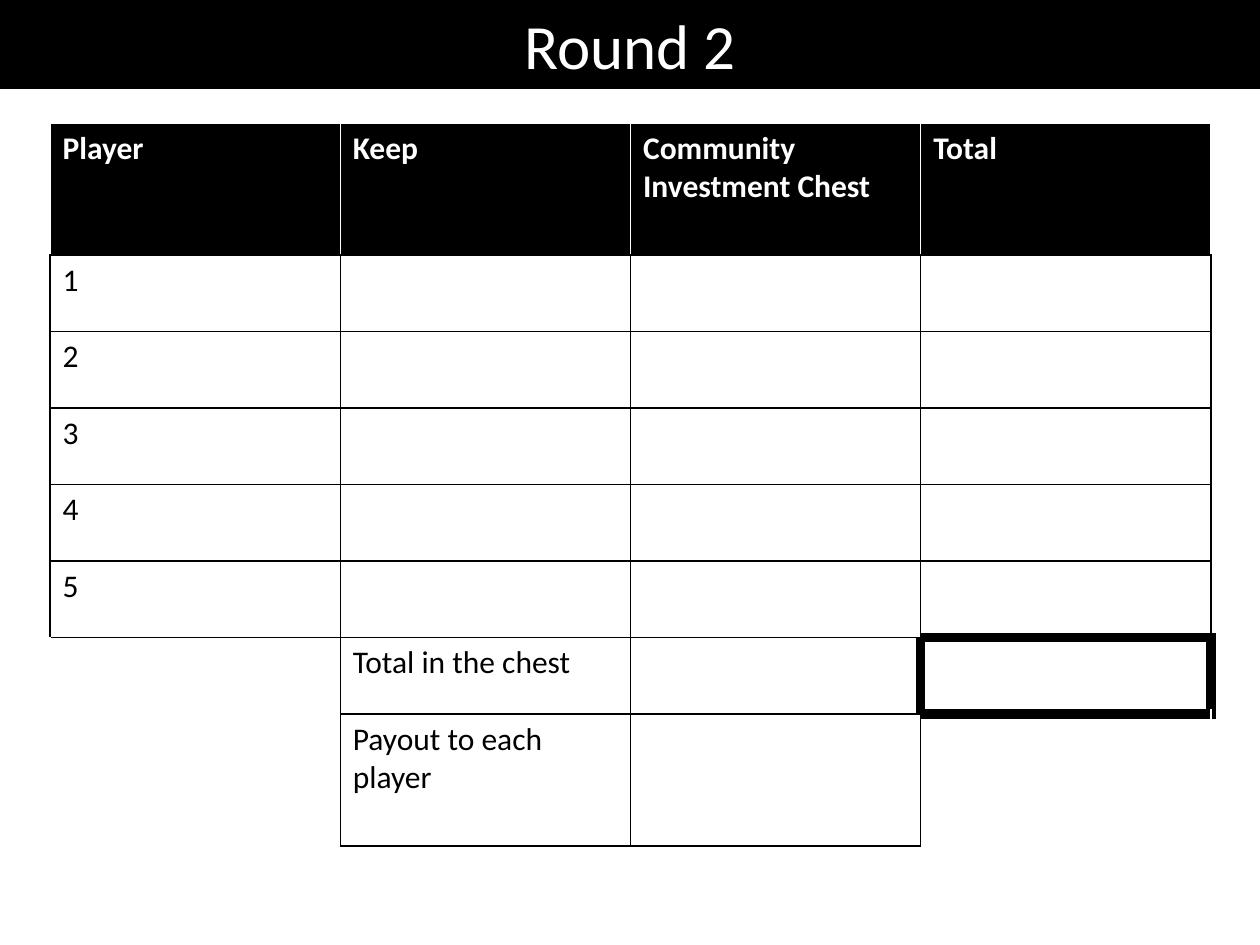
from lxml.etree import SubElement
from pptx import Presentation
from pptx.dml.color import RGBColor
from pptx.enum.shapes import MSO_SHAPE as Shape
from pptx.enum.text import MSO_ANCHOR as Anchor, PP_ALIGN as Align
from pptx.oxml.ns import qn
from pptx.util import Pt

PX = 914400 / 126
BLACK, WHITE = "000000", "FFFFFF"


def write(paragraph, text, size, color, bold=False):
    run = paragraph.add_run()
    run.text = text
    run.font.name = "Calibri"
    run.font.size = Pt(size)
    run.font.bold = bold
    run.font.color.rgb = RGBColor.from_string(color)


def add_border(cell, side, color, points):
    line = SubElement(cell._tc.get_or_add_tcPr(), qn(f"a:ln{side}"), w=str(Pt(points)))
    SubElement(SubElement(line, qn("a:solidFill")), qn("a:srgbClr"), val=color)


prs = Presentation()
prs.slide_width = round(1260 * PX)
prs.slide_height = round(945 * PX)
slide = prs.slides.add_slide(prs.slide_layouts[6])

banner = slide.shapes.add_shape(Shape.RECTANGLE, 0, 0, round(1260 * PX), round(89 * PX))
banner.shadow.inherit = False
banner.fill.solid()
banner.fill.fore_color.rgb = RGBColor.from_string(BLACK)
banner.line.fill.background()
banner.text_frame.word_wrap = True
banner.text_frame.vertical_anchor = Anchor.TOP
title = banner.text_frame.paragraphs[0]
title.alignment = Align.CENTER
write(title, "Round 2", 36, WHITE)

rows = [
    ["Player", "Keep", "Community Investment Chest", "Total"],
    *[[str(player), "", "", ""] for player in range(1, 6)],
    ["", "Total in the chest", "", ""],
    ["", "Payout to each player", "", ""],
]
# Borders that differ from a thin black line, by (row, column) and side
thin, thick = (WHITE, 1), (BLACK, 6)
special_borders = {(0, column): {"L": thin, "R": thin, "T": thin} for column in range(4)}
special_borders |= {
    (5, 3): {"B": thick},
    (6, 0): {"L": thin, "B": thin},
    (6, 2): {"R": thick},
    (6, 3): {"L": thick, "R": thick, "T": thick, "B": thick},
    (7, 0): {"L": thin, "T": thin, "B": thin},
    (7, 3): {"T": thick, "R": thin, "B": thin},
}

score_sheet = slide.shapes.add_table(
    len(rows), 4, round(50 * PX), round(123 * PX), round(1161 * PX), round(723 * PX)
).table
for column in score_sheet.columns:
    column.width = round(1161 * PX / 4)
for row in score_sheet.rows:
    row.height = round(459 * PX / 6)
for tall_row in (0, 7):
    score_sheet.rows[tall_row].height = round(132 * PX)

for r, texts in enumerate(rows):
    is_header = r == 0
    for c, text in enumerate(texts):
        cell = score_sheet.cell(r, c)
        borders = special_borders.get((r, c), {})
        for side in "LRTB":
            add_border(cell, side, *borders.get(side, (BLACK, 1)))
        cell.fill.solid()
        cell.fill.fore_color.rgb = RGBColor.from_string(BLACK if is_header else WHITE)
        if text:
            write(cell.text_frame.paragraphs[0], text, 18, WHITE if is_header else BLACK, is_header)

prs.save("out.pptx")
